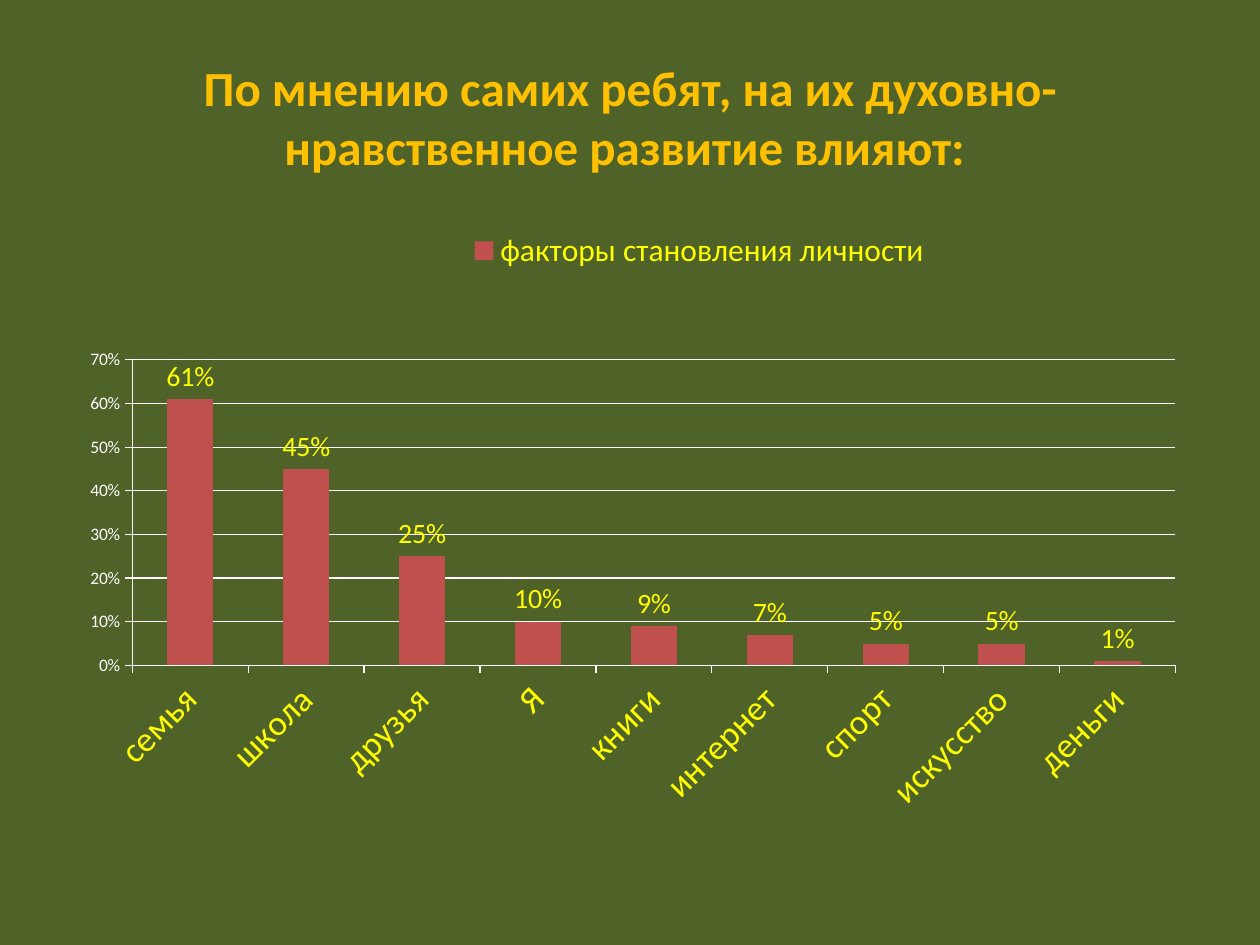
import pptx
import pptx.chart.data
import pptx.dml.color
import pptx.enum.chart
import pptx.enum.text
import pptx.oxml
import pptx.oxml.ns
import pptx.util

Pt = pptx.util.Pt
FONT = "Calibri"
HUES = {"back": "4F6228", "title": "FFC000", "label": "FFFF00",
        "axis": "FFFFFF", "bar": "C0504D"}
SHARES = {"семья": 0.61, "школа": 0.45, "друзья": 0.25, "Я": 0.1,
          "книги": 0.09, "интернет": 0.07, "спорт": 0.05,
          "искусство": 0.05, "деньги": 0.01}


def hue(name):
    return pptx.dml.color.RGBColor.from_string(HUES[name])


def style(font, size, color, bold=False):
    font.name, font.size, font.bold = FONT, Pt(size), bold
    font.color.rgb = hue(color)


def write(frame, text, size=18, color="title", bold=False):
    frame.word_wrap = True
    frame.vertical_anchor = pptx.enum.text.MSO_ANCHOR.MIDDLE
    para = frame.paragraphs[0]
    para.alignment = pptx.enum.text.PP_ALIGN.CENTER
    run = para.add_run()
    run.text = text
    style(run.font, size, color, bold)


def layout(x, y, w, h, inner=False):
    """Return a manual chart layout in fractions of the chart box."""
    target = '<c:layoutTarget val="inner"/>' if inner else ""
    return pptx.oxml.parse_xml(
        f'<c:layout {pptx.oxml.ns.nsdecls("c")}><c:manualLayout>{target}'
        '<c:xMode val="edge"/><c:yMode val="edge"/>'
        f'<c:x val="{x}"/><c:y val="{y}"/><c:w val="{w}"/><c:h val="{h}"/>'
        '</c:manualLayout></c:layout>')


def head(slide, x, y, w, h):
    box = slide.shapes.add_textbox(Pt(x), Pt(y), Pt(w), Pt(h))
    write(box.text_frame,
          "По мнению самих ребят, на их духовно-нравственное развитие влияют: ",
          size=28, bold=True)


def line(fmt):
    fmt.line.color.rgb = hue("axis")
    fmt.line.width = Pt(0.75)


def axes(chart):
    cat, val = chart.category_axis, chart.value_axis
    style(cat.tick_labels.font, 20, "label")
    cat._element.txPr.find(pptx.oxml.ns.qn("a:bodyPr")).set("rot", "-2700000")
    style(val.tick_labels.font, 10, "axis")
    val.tick_labels.number_format = "0%"
    val.tick_labels.number_format_is_linked = False
    val.minimum_scale, val.maximum_scale, val.major_unit = 0, 0.7, 0.1
    val.has_major_gridlines = True
    for fmt in (cat.format, val.format, val.major_gridlines.format):
        line(fmt)
    for axis in (cat, val):
        axis.major_tick_mark = pptx.enum.chart.XL_TICK_MARK.OUTSIDE


def bars(plot):
    plot.gap_width = 150
    plot.vary_by_categories = False
    fill = plot.series[0].format.fill
    fill.solid()
    fill.fore_color.rgb = hue("bar")
    plot.has_data_labels = True
    tags = plot.data_labels
    style(tags.font, 16, "label")
    tags.show_value = True
    tags.number_format, tags.number_format_is_linked = "0%", False
    tags.position = pptx.enum.chart.XL_LABEL_POSITION.OUTSIDE_END


def legend(chart):
    chart.has_legend = True
    key = chart.legend
    key.position = pptx.enum.chart.XL_LEGEND_POSITION.TOP
    key.include_in_layout = False
    style(key.font, 18, "label")
    for old in key._element.findall(pptx.oxml.ns.qn("c:layout")):
        key._element.remove(old)
    key._element.insert(1, layout(0.35, 0.04, 0.42, 0.07))


def graph(slide, x, y, w, h):
    data = pptx.chart.data.CategoryChartData(number_format="0%")
    data.categories = list(SHARES)
    data.add_series("факторы становления личности", list(SHARES.values()))
    kind = pptx.enum.chart.XL_CHART_TYPE.COLUMN_CLUSTERED
    chart = slide.shapes.add_chart(
        kind, Pt(x), Pt(y), Pt(w), Pt(h), data).chart
    style(chart.font, 10, "axis")
    chart.has_title = False
    axes(chart)
    bars(chart.plots[0])
    legend(chart)
    area = chart._chartSpace.chart.plotArea
    for old in area.findall(pptx.oxml.ns.qn("c:layout")):
        area.remove(old)
    area.insert(0, layout(0.06, 0.25, 0.92, 0.49, inner=True))


def main():
    deck = pptx.Presentation()
    deck.slide_width, deck.slide_height = Pt(720), Pt(540)
    slide = deck.slides.add_slide(deck.slide_layouts[6])
    back = slide.background.fill
    back.solid()
    back.fore_color.rgb = hue("back")
    head(slide, 36, 21.6, 648, 90)
    graph(slide, 36.7, 116.6, 648, 356.4)
    deck.save("out.pptx")


if __name__ == "__main__":
    main()
